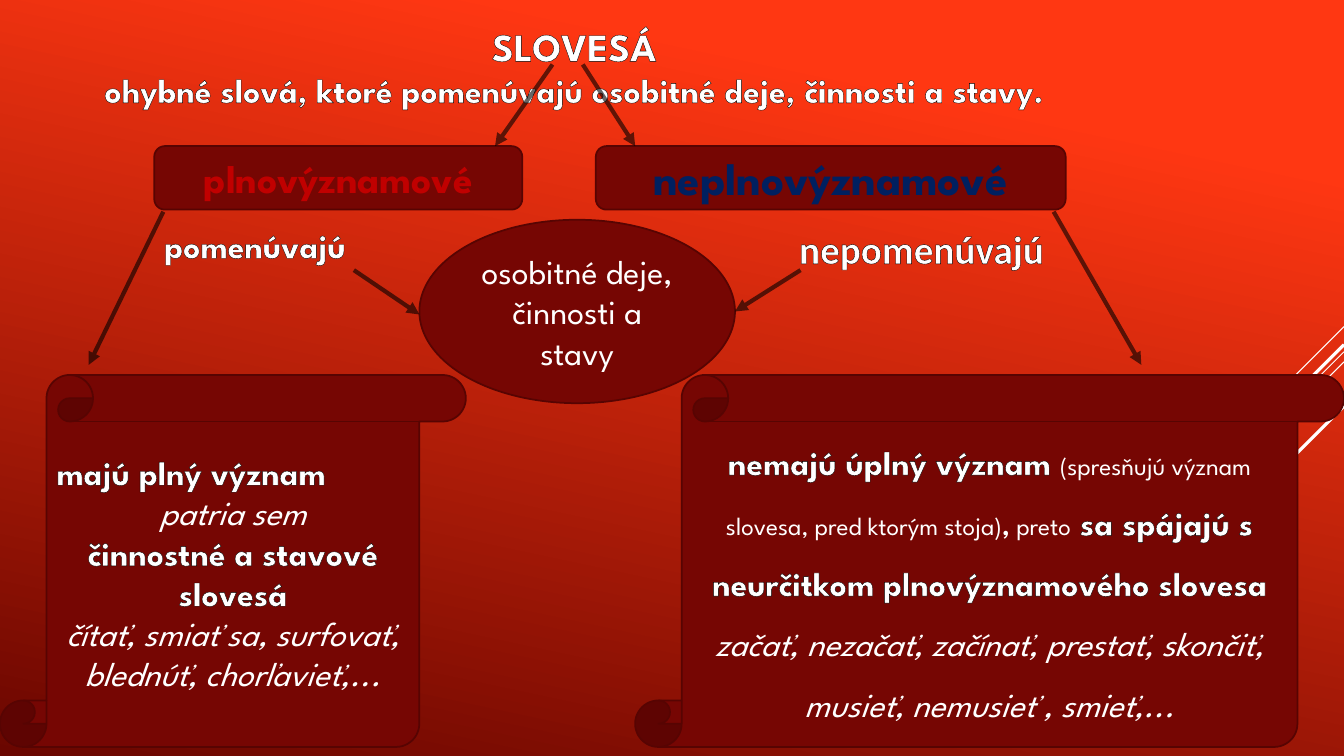
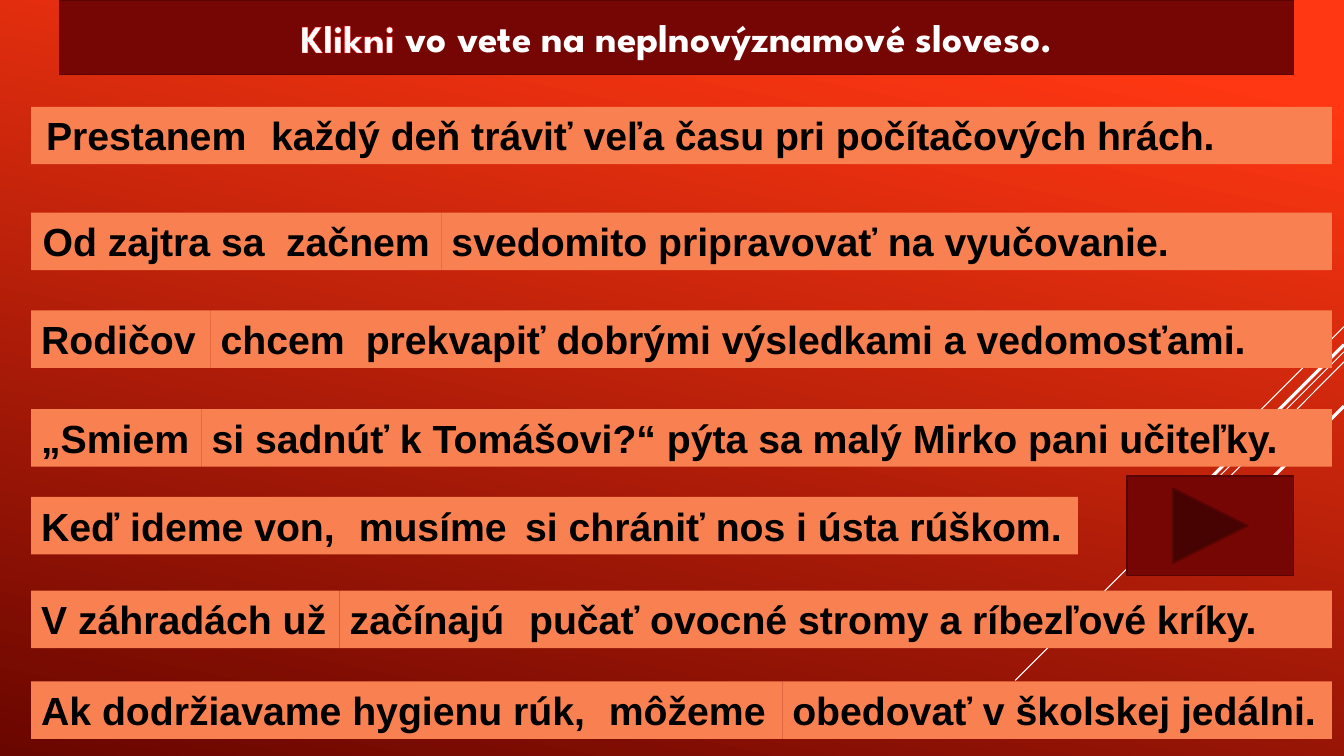
"""Build two slides about full-meaning and auxiliary verbs in Slovak."""
from dataclasses import dataclass

from lxml import etree
from pptx import Presentation
from pptx.dml.color import RGBColor
from pptx.enum.shapes import MSO_CONNECTOR, MSO_SHAPE
from pptx.enum.text import MSO_ANCHOR, MSO_AUTO_SIZE, PP_ALIGN
from pptx.oxml.ns import qn
from pptx.util import Inches, Pt

STRAIGHT = MSO_CONNECTOR.STRAIGHT
ROUNDED = MSO_SHAPE.ROUNDED_RECTANGLE
OVAL = MSO_SHAPE.OVAL
SCROLL = MSO_SHAPE.VERTICAL_SCROLL
FORWARD = MSO_SHAPE.ACTION_BUTTON_FORWARD_OR_NEXT
LEFT, CENTER, RIGHT = PP_ALIGN.LEFT, PP_ALIGN.CENTER, PP_ALIGN.RIGHT
TOP, MIDDLE = MSO_ANCHOR.TOP, MSO_ANCHOR.MIDDLE
NO_AUTOFIT = MSO_AUTO_SIZE.NONE
TITLE_ONLY = 5


@dataclass(frozen=True)
class Theme:
    """Colours, fonts and type sizes of the deck."""
    glow: str = "FF3712"
    dusk: str = "6A0600"
    panel: str = "760603"
    edge: str = "570402"
    strip: str = "F98151"
    white: str = "FFFFFF"
    black: str = "000000"
    red: str = "C00000"
    bright_red: str = "FF0000"
    navy: str = "002060"
    display: str = "League Spartan"
    plain: str = "Calibri"
    sentence: str = "Arial"
    huge: int = 32
    large: int = 28
    medium: int = 24
    small: int = 18
    angle: int = 102
    edge_width: float = 1.25
    arrow_width: int = 3
    arrow_alpha: int = 60


T = Theme()


@dataclass(frozen=True)
class Outline:
    """Contour of letters."""
    color: str = T.black
    width: float = 0.25


THIN = Outline()


@dataclass(frozen=True)
class Run:
    """Text with one format."""
    text: str
    size: int = T.medium
    color: str = T.white
    font: str = T.display
    bold: bool = False
    italic: bool = False
    outline: Outline | None = None


@dataclass(frozen=True)
class Para:
    """Runs set as one paragraph."""
    runs: tuple[Run, ...]
    align: PP_ALIGN = CENTER
    spacing: float | None = None


@dataclass(frozen=True)
class Box:
    """Position and size in inches."""
    left: float
    top: float
    width: float
    height: float

    def lengths(self) -> tuple:
        """Return the four lengths for python-pptx."""
        return tuple(Inches(v) for v in (self.left, self.top, self.width, self.height))


@dataclass(frozen=True)
class Line:
    """Straight line between two points in inches."""
    x1: float
    y1: float
    x2: float
    y2: float
    width: float = T.arrow_width


@dataclass(frozen=True)
class Panel:
    """Dark preset shape with optional text."""
    kind: MSO_SHAPE
    box: Box
    paras: tuple[Para, ...] = ()


@dataclass(frozen=True)
class Sentence:
    """Row of adjoining strips, one per phrase of a sentence."""
    top: float
    edges: tuple[float, ...]
    phrases: tuple[str, ...]
    first_align: PP_ALIGN = LEFT


def strong(text: str, **kw) -> Run:
    """Return a bold run with a thin contour."""
    return Run(text, bold=True, outline=THIN, **kw)


STREAKS = (
    Line(13.33, 3.24, 12.33, 4.24, 0.75),
    Line(13.33, 3.49, 10.07, 6.75, 0.75),
    Line(13.33, 3.59, 11.26, 5.67, 0.75),
    Line(13.33, 3.42, 11.42, 5.33, 2.25),
    Line(13.33, 4.03, 11.94, 5.42, 2.25),
)

VERBS_TITLE = (
    Para((strong("SLOVESÁ", size=T.large),)),
    Para((strong("ohybné slová, ktoré pomenúvajú osobitné deje, činnosti a stavy."),)),
)

VERB_PANELS = (
    Panel(ROUNDED, Box(1.53, 1.45, 3.65, 0.63), (
        Para((Run("plnovýznamové", T.large, T.red, bold=True),)),)),
    Panel(ROUNDED, Box(5.91, 1.45, 4.66, 0.63), (
        Para((Run("neplnovýznamové", T.huge, T.navy, bold=True,
                  outline=Outline(T.white)),)),)),
    Panel(OVAL, Box(4.16, 2.18, 3.13, 1.82), (
        Para((Run("osobitné deje, činnosti a stavy"),)),)),
    Panel(SCROLL, Box(0, 3.72, 4.62, 3.69), (
        Para((strong("majú plný význam"),), LEFT),
        Para((Run("patria sem", italic=True),)),
        Para((strong("činnostné a stavové slovesá"),)),
        Para((Run("čítať, smiať sa, surfovať, blednúť, chorľavieť,...", italic=True),)))),
    Panel(SCROLL, Box(6.3, 3.72, 7.03, 3.69), (
        Para((strong("nemajú úplný význam "),
              Run("(spresňujú význam slovesa, pred ktorým stoja)", T.small),
              Run(", ", T.small, bold=True),
              Run("preto", T.small),
              strong(" sa spájajú s neurčitkom plnovýznamového slovesa")), spacing=1.5),
        Para((Run("začať, nezačať, začínať, prestať, skončiť, musieť, nemusieť , smieť,...",
                  italic=True),), spacing=1.5))),
)

VERB_LABELS = (
    (Box(1.53, 2.18, 2.76, 0.5), Para((strong("pomenúvajú"),), LEFT)),
    (Box(7.29, 2.18, 3.16, 0.57),
     Para((Run("nepomenúvajú", T.large, font=T.plain, bold=True,
               outline=Outline(width=0.75)),), RIGHT)),
)

VERB_ARROWS = (
    Line(5.48, 0.64, 4.91, 1.45),
    Line(5.78, 0.64, 6.3, 1.45),
    Line(3.51, 2.68, 4.16, 3.12),
    Line(7.94, 2.68, 7.29, 3.09),
    Line(1.62, 2.1, 0.88, 3.62),
    Line(10.45, 2.1, 11.32, 3.62),
)

QUIZ_TITLE = (
    Para((Run("Klikni", T.large, bold=True, outline=Outline(T.bright_red, 0.75)),
          Run(" vo vete na neplnovýznamové sloveso.", T.large, bold=True))),
)

ROW_LEFT, ROW_RIGHT, ROW_HEIGHT = 0.31, 13.21, 0.57
SENTENCES = (
    Sentence(1.06, (ROW_LEFT, 2.59, ROW_RIGHT),
             ("Prestanem", "každý deň tráviť veľa času pri počítačových hrách."), CENTER),
    Sentence(2.11, (ROW_LEFT, 2.74, 4.38, ROW_RIGHT),
             ("Od zajtra sa", "začnem", "svedomito pripravovať na vyučovanie."), CENTER),
    Sentence(3.08, (ROW_LEFT, 2.09, 3.53, ROW_RIGHT),
             ("Rodičov", "chcem", "prekvapiť dobrými výsledkami a vedomosťami.")),
    Sentence(4.06, (ROW_LEFT, 2, ROW_RIGHT),
             ("„Smiem", "si sadnúť k Tomášovi?“ pýta sa malý Mirko pani učiteľky.")),
    Sentence(4.93, (ROW_LEFT, 3.46, 5.11, 10.69),
             ("Keď ideme von,", "musíme", "si chrániť nos i ústa rúškom.")),
    Sentence(5.86, (ROW_LEFT, 3.37, 5.15, ROW_RIGHT),
             ("V záhradách už", "začínajú", "pučať ovocné stromy a ríbezľové kríky.")),
    Sentence(6.76, (ROW_LEFT, 5.94, 7.76, ROW_RIGHT),
             ("Ak dodržiavame hygienu rúk,", "môžeme", "obedovať v školskej jedálni.")),
)


def rgb(color: str) -> RGBColor:
    """Turn a hex string into a colour."""
    return RGBColor.from_string(color)


def write(tf, paras: tuple[Para, ...]) -> None:
    """Fill a text frame run by run."""
    tf.word_wrap = True
    for i, para in enumerate(paras):
        p = tf.add_paragraph() if i else tf.paragraphs[0]
        p.alignment = para.align
        if para.spacing:
            p.line_spacing = para.spacing
        for run in para.runs:
            r = p.add_run()
            r.text = run.text
            font = r.font
            font.size, font.name = Pt(run.size), run.font
            font.bold, font.italic = run.bold, run.italic
            font.color.rgb = rgb(run.color)
            if run.outline:
                ln = etree.Element(qn("a:ln"), w=str(Pt(run.outline.width)))
                fill = etree.SubElement(ln, qn("a:solidFill"))
                etree.SubElement(fill, qn("a:srgbClr"), val=run.outline.color)
                r._r.get_or_add_rPr().insert(0, ln)


def paint(sp) -> None:
    """Give a shape the dark fill and edge."""
    sp.fill.solid()
    sp.fill.fore_color.rgb = rgb(T.panel)
    sp.line.color.rgb = rgb(T.edge)
    sp.line.width = Pt(T.edge_width)


def add_panel(s, panel: Panel) -> None:
    """Draw a dark preset shape."""
    sp = s.shapes.add_shape(panel.kind, *panel.box.lengths())
    sp.shadow.inherit = False
    paint(sp)
    write(sp.text_frame, panel.paras)


def add_label(s, box: Box, para: Para):
    """Draw a text box and return it."""
    sp = s.shapes.add_textbox(*box.lengths())
    write(sp.text_frame, (para,))
    return sp


def add_line(s, line: Line, color: str):
    """Draw a straight line without shadow and return it."""
    ends = (Inches(v) for v in (line.x1, line.y1, line.x2, line.y2))
    cxn = s.shapes.add_connector(STRAIGHT, *ends)
    cxn.line.color.rgb = rgb(color)
    cxn.line.width = Pt(line.width)
    etree.SubElement(cxn.element.spPr, qn("a:effectLst"))
    return cxn


def add_arrow(s, line: Line) -> None:
    """Draw a translucent arrow."""
    ln = add_line(s, line, T.black).element.spPr.find(qn("a:ln"))
    color = ln.find(".//" + qn("a:srgbClr"))
    etree.SubElement(color, qn("a:alpha"), val=str(T.arrow_alpha * 1000))
    etree.SubElement(ln, qn("a:tailEnd"), type="triangle")


def add_streaks(prs, s) -> None:
    """Move the white diagonal lines to the slide master."""
    for i, streak in enumerate(STREAKS):
        element = add_line(s, streak, T.white).element
        element.find(".//" + qn("p:cNvPr")).set("id", str(100 + i))
        prs.slide_master.shapes.element.append(element)


def add_slide(prs, start: float, box: Box, paras: tuple[Para, ...], anchor: MSO_ANCHOR):
    """Add a slide with gradient background and title."""
    s = prs.slides.add_slide(prs.slide_layouts[TITLE_ONLY])
    fill = s.background.fill
    fill.gradient()
    fill.gradient_angle = 360 - T.angle
    for stop, position, color in zip(fill.gradient_stops, (start, 1), (T.glow, T.dusk)):
        stop.position = position
        stop.color.rgb = rgb(color)
    title = s.shapes.title
    title.left, title.top, title.width, title.height = box.lengths()
    tf = title.text_frame
    tf.auto_size, tf.vertical_anchor = NO_AUTOFIT, anchor
    write(tf, paras)
    return s


def add_sentence(s, row: Sentence) -> None:
    """Draw the strips of one sentence."""
    for i, (text, left, right) in enumerate(zip(row.phrases, row.edges, row.edges[1:])):
        align = LEFT if i else row.first_align
        run = Run(text, T.large, T.black, T.sentence, bold=True)
        sp = add_label(s, Box(left, row.top, right - left, ROW_HEIGHT), Para((run,), align))
        sp.fill.solid()
        sp.fill.fore_color.rgb = rgb(T.strip)
        sp.text_frame.margin_left = Inches(0.1 if align == LEFT else 0)
        sp.text_frame.margin_right = 0


def build_verbs(prs) -> None:
    """Build the overview of verbs."""
    s = add_slide(prs, 0.17, Box(0.07, 0.17, 11.25, 0.98), VERBS_TITLE, TOP)
    add_streaks(prs, s)
    for panel in VERB_PANELS:
        add_panel(s, panel)
    for box, para in VERB_LABELS:
        add_label(s, box, para)
    for arrow in VERB_ARROWS:
        add_arrow(s, arrow)


def build_quiz(prs) -> None:
    """Build the exercise with sentences."""
    s = add_slide(prs, 0.1, Box(0.59, 0, 12.24, 0.74), QUIZ_TITLE, MIDDLE)
    geom = etree.SubElement(s.shapes.title.element.spPr, qn("a:prstGeom"), prst="roundRect")
    etree.SubElement(geom, qn("a:avLst"))
    paint(s.shapes.title)
    for row in SENTENCES:
        add_sentence(s, row)
    add_panel(s, Panel(FORWARD, Box(11.18, 4.72, 1.65, 0.99)))


def main() -> None:
    """Build and save the deck."""
    prs = Presentation()
    prs.slide_width, prs.slide_height = Inches(13.33), Inches(7.5)
    build_verbs(prs)
    build_quiz(prs)
    prs.save("out.pptx")


if __name__ == "__main__":
    main()
